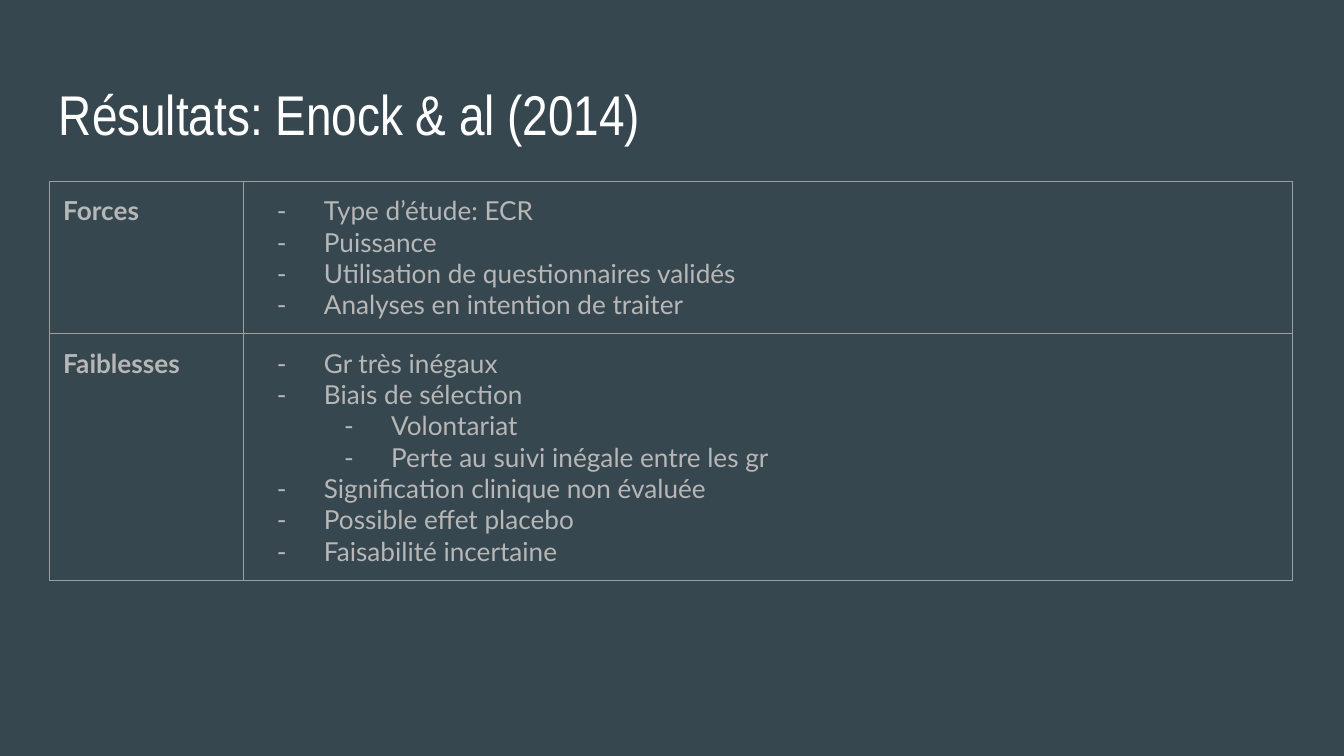
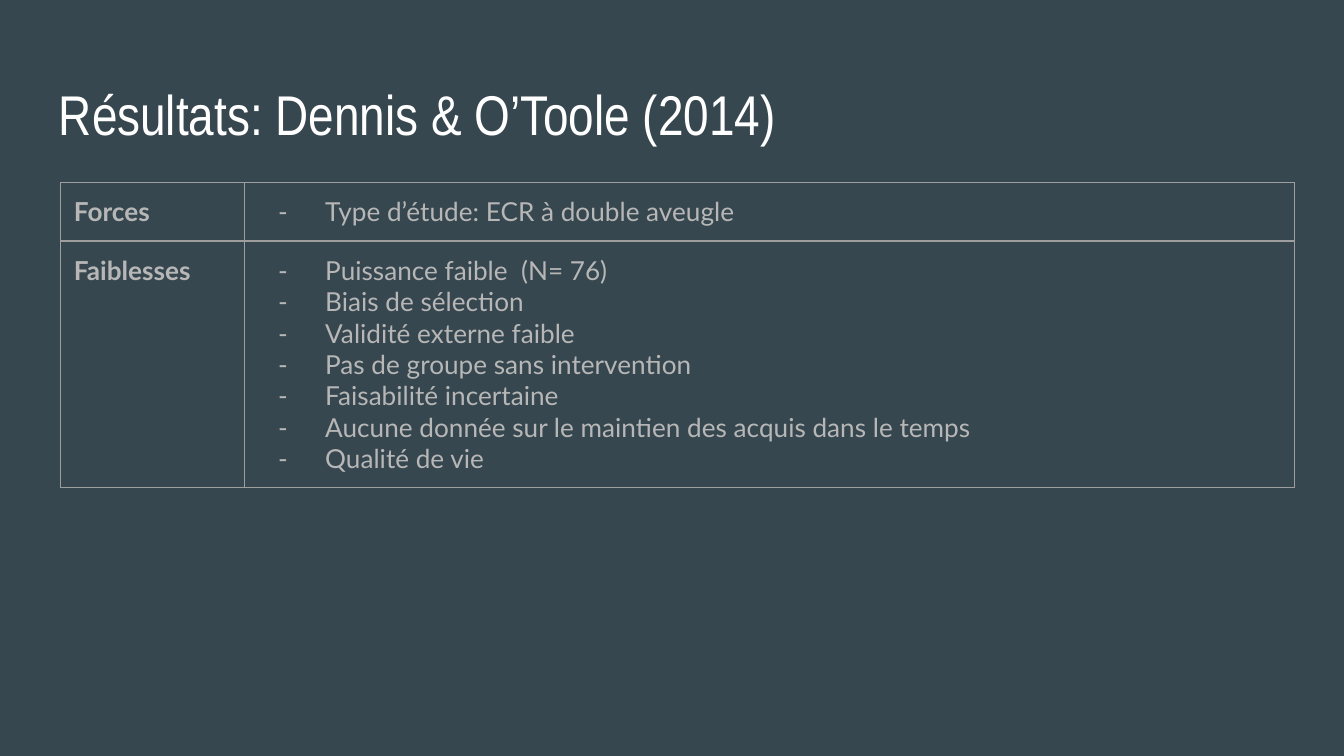
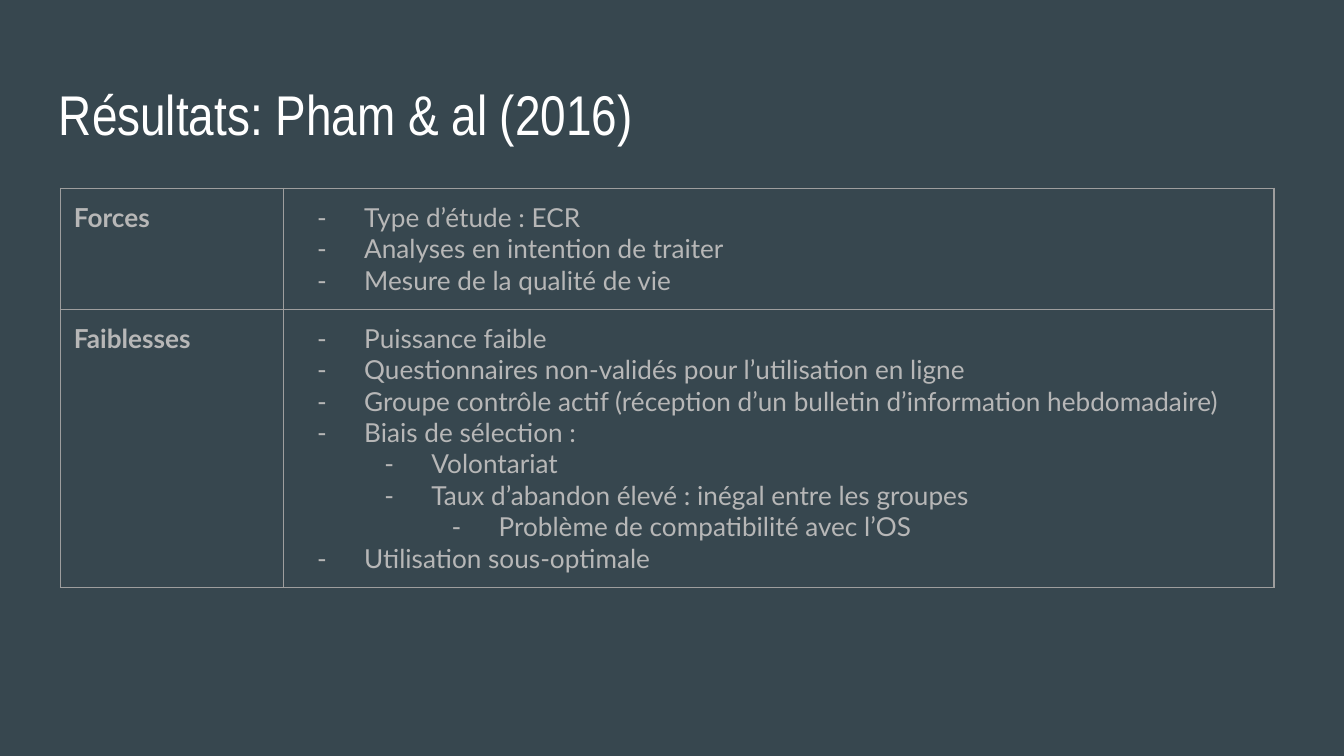
from lxml import etree
from pptx import Presentation
from pptx.dml.color import RGBColor
from pptx.enum.text import MSO_ANCHOR
from pptx.oxml.ns import qn
from pptx.util import Inches, Pt

# Shared style
SLATE = RGBColor(0x37, 0x47, 0x4F)
WHITE = RGBColor(0xFF, 0xFF, 0xFF)
LIGHT_GREY = RGBColor(0xB7, 0xB7, 0xB7)
BORDER_GREY = RGBColor(0x9E, 0x9E, 0x9E)
TITLE_FONT = "Arial Narrow"
BODY_FONT = "Lato"
TOP = MSO_ANCHOR.TOP
SLIDE_WIDTH = Inches(10)
SLIDE_HEIGHT = SLIDE_WIDTH * 9 // 16
INSET = 0.1
LINE_HEIGHT = 0.23
INDENT_STEP = 0.5
HANGING = 0.35
BORDER_WIDTH = Pt(0.75)

# Each study: title, table position, column widths, then (level, text) points
STUDIES = [
    {
        "title": "Résultats: Enock & al (2014)",
        "left": 0.37, "top": 1.35, "columns": (1.44, 7.81),
        "rows": {
            "Forces": [
                (0, "Type d’étude: ECR"),
                (0, "Puissance"),
                (0, "Utilisation de questionnaires validés"),
                (0, "Analyses en intention de traiter"),
            ],
            "Faiblesses": [
                (0, "Gr très inégaux"),
                (0, "Biais de sélection"),
                (1, "Volontariat"),
                (1, "Perte au suivi inégale entre les gr"),
                (0, "Signification clinique non évaluée"),
                (0, "Possible effet placebo"),
                (0, "Faisabilité incertaine"),
            ],
        },
    },
    {
        "title": "Résultats: Dennis & O’Toole (2014)",
        "left": 0.45, "top": 1.36, "columns": (1.37, 7.81),
        "rows": {
            "Forces": [(0, "Type d’étude: ECR à double aveugle")],
            "Faiblesses": [
                (0, "Puissance faible  (N= 76)"),
                (0, "Biais de sélection"),
                (0, "Validité externe faible"),
                (0, "Pas de groupe sans intervention"),
                (0, "Faisabilité incertaine"),
                (0, "Aucune donnée sur le maintien des acquis dans le temps"),
                (0, "Qualité de vie"),
            ],
        },
    },
    {
        "title": "Résultats: Pham & al (2016)",
        "left": 0.45, "top": 1.4, "columns": (1.66, 7.37),
        "rows": {
            "Forces": [
                (0, "Type d’étude : ECR"),
                (0, "Analyses en intention de traiter"),
                (0, "Mesure de la qualité de vie"),
            ],
            "Faiblesses": [
                (0, "Puissance faible"),
                (0, "Questionnaires non-validés pour l’utilisation en ligne"),
                (0, "Groupe contrôle actif (réception d’un bulletin "
                    "d’information hebdomadaire)"),
                (0, "Biais de sélection :"),
                (1, "Volontariat"),
                (1, "Taux d’abandon élevé : inégal entre les groupes"),
                (2, "Problème de compatibilité avec l’OS"),
                (0, "Utilisation sous-optimale"),
            ],
        },
    },
]


def write_text(para, text, font=BODY_FONT, size=14, color=LIGHT_GREY, bold=False):
    span = para.add_run()
    span.text = text
    span.font.name = font
    span.font.size = Pt(size)
    span.font.color.rgb = color
    span.font.bold = bold


def set_insets(holder):
    """Give a text frame or a table cell the shared inner margins."""
    holder.margin_left = holder.margin_right = Inches(INSET)
    holder.margin_top = holder.margin_bottom = Inches(INSET)
    holder.vertical_anchor = TOP


def add_title(page, text):
    box = page.shapes.add_textbox(Inches(0.34), Inches(0.49), Inches(9.32), Inches(0.63))
    frame = box.text_frame
    frame.word_wrap = True
    set_insets(frame)
    write_text(frame.paragraphs[0], text, font=TITLE_FONT, size=30, color=WHITE)


def add_color(parent, color):
    etree.SubElement(parent, qn("a:srgbClr"), val=str(color))


def add_dash(para, level):
    """Hang the paragraph on a dash, one indent step per level."""
    para.level = level
    properties = para._p.get_or_add_pPr()
    properties.set("marL", str(Inches(INDENT_STEP * (level + 1))))
    properties.set("indent", str(-Inches(HANGING)))
    add_color(etree.SubElement(properties, qn("a:buClr")), LIGHT_GREY)
    etree.SubElement(properties, qn("a:buFont"), typeface=BODY_FONT)
    etree.SubElement(properties, qn("a:buChar"), char="-")


def style_cell(cell):
    set_insets(cell)
    properties = cell._tc.get_or_add_tcPr()
    for side in ("a:lnL", "a:lnR", "a:lnT", "a:lnB"):
        line = etree.SubElement(properties, qn(side), w=str(BORDER_WIDTH))
        add_color(etree.SubElement(line, qn("a:solidFill")), BORDER_GREY)
    cell.fill.background()


def add_points(cell, points):
    frame = cell.text_frame
    for index, (level, text) in enumerate(points):
        para = frame.add_paragraph() if index else frame.paragraphs[0]
        add_dash(para, level)
        write_text(para, text)


def add_review_table(page, left, top, columns, rows):
    heights = [2 * INSET + LINE_HEIGHT * len(points) for points in rows.values()]
    table = page.shapes.add_table(
        len(rows), len(columns), Inches(left), Inches(top),
        Inches(sum(columns)), Inches(sum(heights))).table
    table.first_row = False
    table.horz_banding = False
    for column, width in zip(table.columns, columns):
        column.width = Inches(width)
    for row, height, (label, points) in zip(table.rows, heights, rows.items()):
        row.height = Inches(height)
        label_cell, points_cell = row.cells
        style_cell(label_cell)
        style_cell(points_cell)
        write_text(label_cell.text_frame.paragraphs[0], label, bold=True)
        add_points(points_cell, points)


def add_study(deck, study):
    page = deck.slides.add_slide(deck.slide_layouts[6])
    page.background.fill.solid()
    page.background.fill.fore_color.rgb = SLATE
    add_title(page, study["title"])
    add_review_table(page, study["left"], study["top"], study["columns"], study["rows"])


def main():
    deck = Presentation()
    deck.slide_width = SLIDE_WIDTH
    deck.slide_height = SLIDE_HEIGHT
    for study in STUDIES:
        add_study(deck, study)
    deck.save("out.pptx")


if __name__ == "__main__":
    main()
